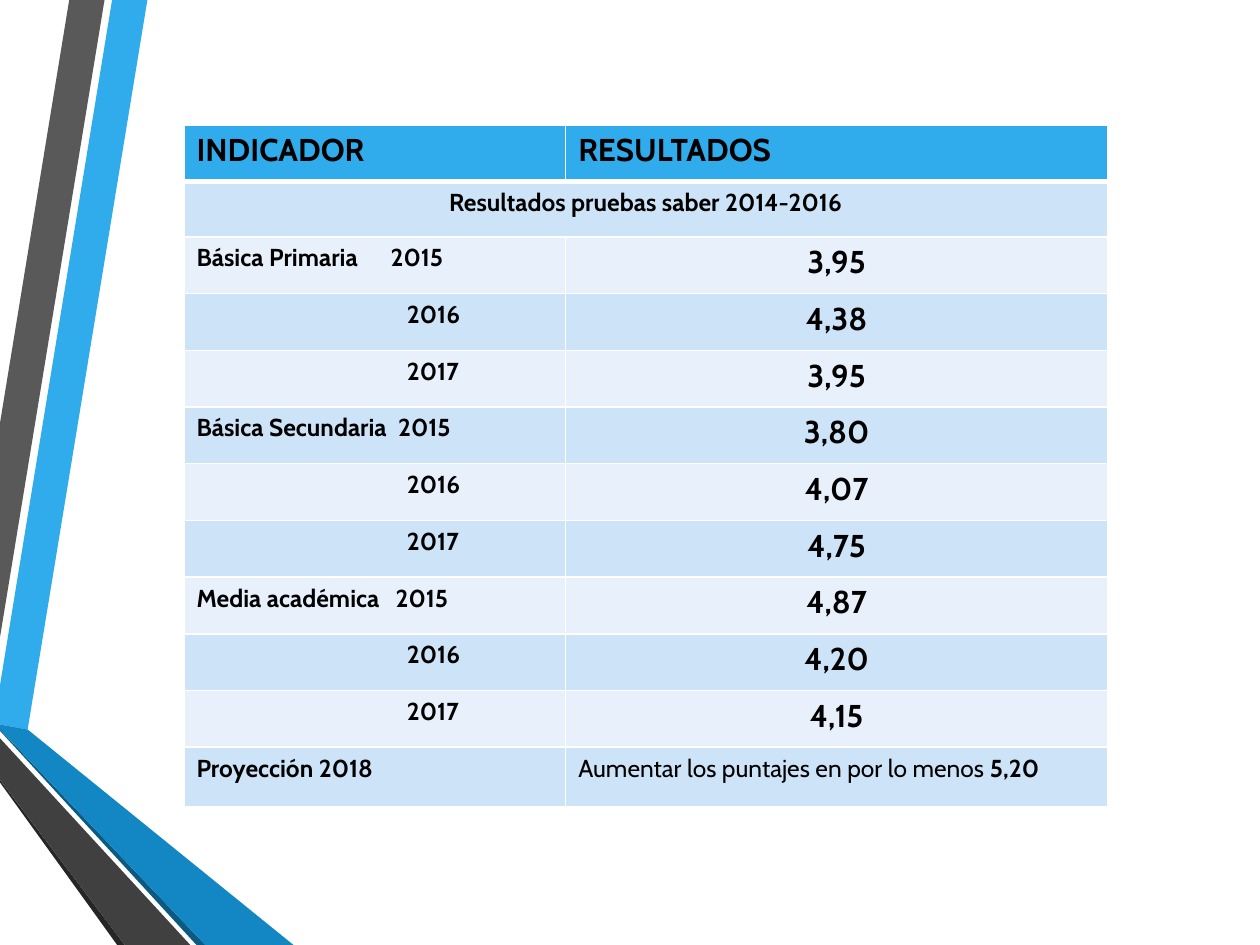
from lxml import etree
from pptx import Presentation
from pptx import util as u
from pptx.dml.color import RGBColor
from pptx.enum import text
from pptx.oxml.ns import qn

COLOURS = {
    "sky": "30ACEC", "ocean": "1287C3", "navy": "0C5A82",
    "grey": "595959", "charcoal": "404040", "soot": "262626",
    "band": "CDE3F8", "pale": "E8F1FB", "white": "FFFFFF", "black": "000000",
}
GRID_COLUMNS, GRID_ROWS = 10, 7.5
RIBBONS = [
    ("sky", [(0, 5.44), (0, 5.75), (0.22, 5.79), (1.17, 0), (0.89, 0)]),
    ("grey", [(0.83, 0), (0.55, 0), (0, 3.36), (0, 5.06)]),
    ("soot", [(0, 6.19), (0, 6.21), (0.93, 7.5), (0.99, 7.5)]),
    ("navy", [(0, 5.79), (0, 5.8), (1.56, 7.5), (1.63, 7.5)]),
    ("ocean", [(0, 5.79), (1.63, 7.5), (2.33, 7.5), (0.22, 5.79), (0, 5.75)]),
    ("charcoal", [(0, 6.19), (0.99, 7.5), (1.51, 7.5), (0, 5.86)]),
]
LEVELS = [
    ("Básica Primaria", 1.54, ["3,95", "4,38", "3,95"]),
    ("Básica Secundaria", 1.6, ["3,80", "4,07", "4,75"]),
    ("Media académica", 1.58, ["4,87", "4,20", "4,15"]),
]
YEARS = ["2015", "2016", "2017"]
YEAR_INDENT = 1.77
COLUMN_WIDTHS = [3.03, 4.3]
ROW_HEIGHTS = [0.45, 0.44] + [0.45] * 9 + [0.47]
HEADING = {"size": u.Pt(18), "bold": True}
LABEL = {"size": u.Pt(14), "bold": True}
PLAIN = {"size": u.Pt(14), "bold": False}
CENTRE = text.PP_ALIGN.CENTER


def colour(name):
    return RGBColor.from_string(COLOURS[name])


def add_ribbons(page, box):
    left, top, width, height = box
    for name, corners in RIBBONS:
        points = [(round(left + x * width / GRID_COLUMNS),
                   round(top + y * height / GRID_ROWS)) for x, y in corners]
        builder = page.shapes.build_freeform(*points[0])
        builder.add_line_segments(points[1:], close=True)
        ribbon = builder.convert_to_shape()
        ribbon.shadow.inherit = False
        ribbon.fill.solid()
        ribbon.fill.fore_color.rgb = colour(name)
        ribbon.line.fill.background()


def write(cell, spans, align=None):
    para = cell.text_frame.paragraphs[0]
    para.alignment = align
    for words, style in spans:
        span = para.add_run()
        span.text = words
        span.font.color.rgb = colour("black")
        for key, value in {"name": "Cabin", **style}.items():
            setattr(span.font, key, value)
    return para


def add_tab(para, position):
    properties = para._p.get_or_add_pPr()
    stops = etree.SubElement(properties, qn("a:tabLst"))
    etree.SubElement(stops, qn("a:tab"), pos=str(u.Inches(position)), algn="l")


def paint(cell, fill, widths):
    properties = cell._tc.get_or_add_tcPr()
    for side, width in zip("LRTB", widths):
        line = etree.SubElement(properties, qn(f"a:ln{side}"), w=str(u.Pt(width)))
        solid = etree.SubElement(line, qn("a:solidFill"))
        etree.SubElement(solid, qn("a:srgbClr"), val=COLOURS["white"])
    cell.fill.solid()
    cell.fill.fore_color.rgb = colour(fill)


def add_results(page, box):
    table = page.shapes.add_table(len(ROW_HEIGHTS), len(COLUMN_WIDTHS), *box).table
    for parts, key, shares, length in (
            (table.columns, "width", COLUMN_WIDTHS, box[2]),
            (table.rows, "height", ROW_HEIGHTS, box[3])):
        for part, share in zip(parts, shares):
            setattr(part, key, round(length * share / sum(shares)))
    for r in range(len(ROW_HEIGHTS)):
        fill = "sky" if r == 0 else "band" if r % 2 else "pale"
        widths = (1, 1, 3 if r == 1 else 1, 3 if r == 0 else 1)
        for c in range(len(COLUMN_WIDTHS)):
            paint(table.cell(r, c), fill, widths)

    for c, heading in enumerate(["INDICADOR", "RESULTADOS"]):
        write(table.cell(0, c), [(heading, HEADING)])
    table.cell(1, 0).merge(table.cell(1, 1))
    write(table.cell(1, 0), [("Resultados pruebas saber 2014-2016", LABEL)], CENTRE)
    for group, (level, tab, scores) in enumerate(LEVELS):
        for offset, (year, score) in enumerate(zip(YEARS, scores)):
            r = 2 + group * len(YEARS) + offset
            label = table.cell(r, 0)
            if offset == 0:
                add_tab(write(label, [(f"{level}\t{year}", LABEL)]), tab)
            else:
                label.margin_left = u.Inches(YEAR_INDENT)
                write(label, [(year, LABEL)])
            write(table.cell(r, 1), [(score, HEADING)], CENTRE)
    last = len(ROW_HEIGHTS) - 1
    write(table.cell(last, 0), [("Proyección 2018", LABEL)])
    write(table.cell(last, 1),
          [("Aumentar los puntajes en por lo menos ", PLAIN), ("5,20", LABEL)])


def main():
    deck = Presentation()
    deck.slide_width, deck.slide_height = u.Inches(GRID_COLUMNS), u.Inches(GRID_ROWS)
    page = deck.slides.add_slide(deck.slide_layouts[6])
    add_ribbons(page, (0, 0, deck.slide_width, deck.slide_height))
    column, row = deck.slide_width / GRID_COLUMNS, deck.slide_height / GRID_ROWS
    add_results(page, (round(1.46 * column), round(0.99 * row),
                       round(sum(COLUMN_WIDTHS) * column),
                       round(sum(ROW_HEIGHTS) * row)))
    deck.save("out.pptx")


if __name__ == "__main__":
    main()
